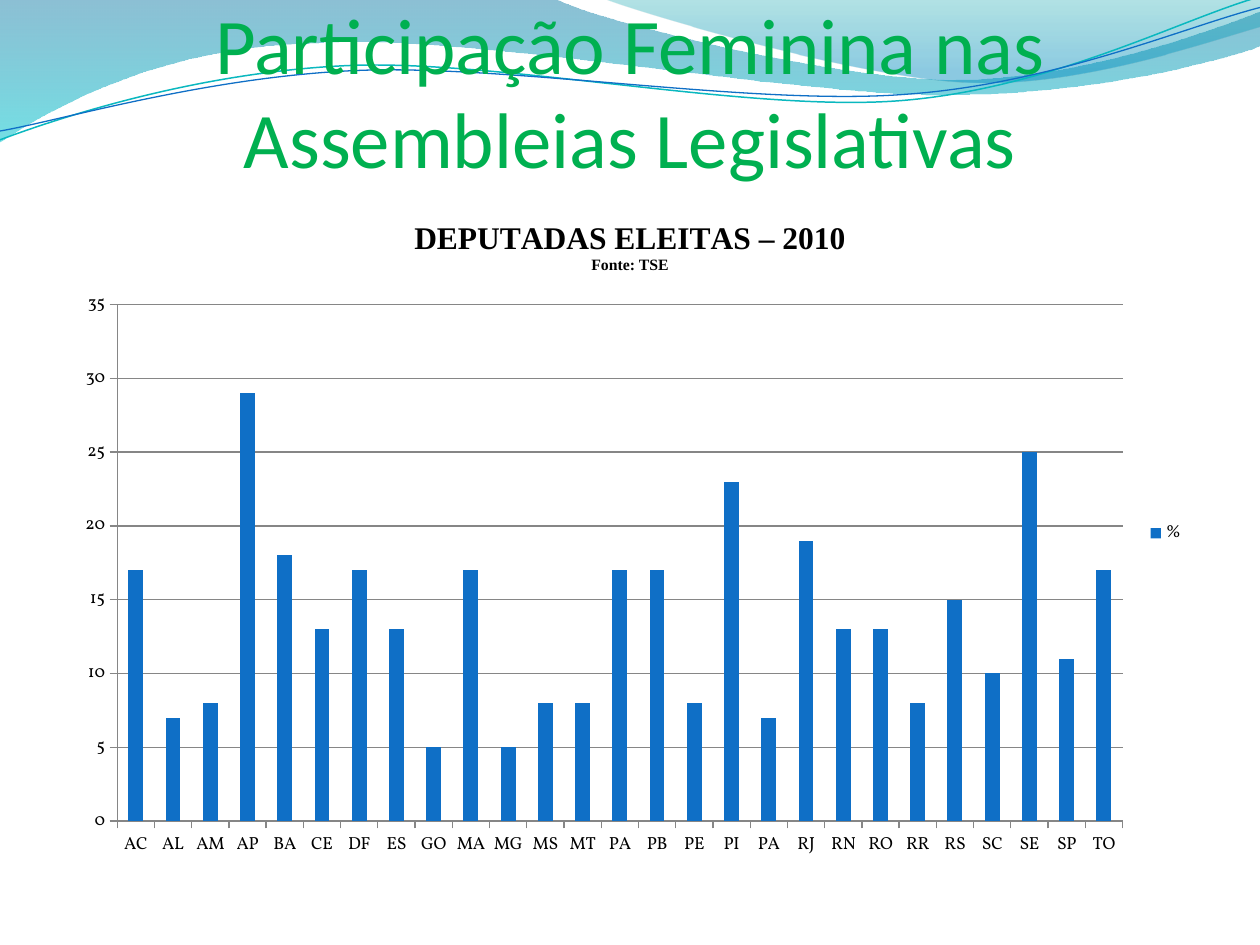
"""Build a slide with a wave header and a column chart of elected deputies."""
import math
from lxml import etree
from pptx import Presentation
from pptx import util as u
from pptx.chart.data import CategoryChartData
from pptx.dml.color import RGBColor
from pptx.enum import chart as ch, text
from pptx.oxml import parse_xml
from pptx.oxml.ns import nsdecls, qn

INCH = 2.54


def rgb(value):
    return RGBColor.from_string(value)


def add_path(shapes, start, steps, closed, turn=0, center=(0, 0)):
    pts = [start] + [step[i:i + 2] for step in steps for i in range(0, len(step), 2)]
    cx, cy = center
    cos, sin = math.cos(math.radians(turn)), math.sin(math.radians(turn))
    pts = [(u.Cm(INCH * (cx + (x - cx) * cos + (y - cy) * sin)),
            u.Cm(INCH * (cy - (x - cx) * sin + (y - cy) * cos))) for x, y in pts]
    fb = shapes.build_freeform(*pts[0])
    fb.add_line_segments(pts[1:], close=closed)
    sp = fb.convert_to_shape()
    sp.shadow.inherit = False
    sp.rotation = turn % 360
    lines = iter(list(sp._element.spPr.iter(qn("a:lnTo"))))
    for step in steps:
        first = next(lines)
        if len(step) == 6:
            first.tag = qn("a:cubicBezTo")
            for _ in range(2):
                other = next(lines)
                first.append(other[0])
                other.getparent().remove(other)
    return sp


prs = Presentation()
prs.slide_width, prs.slide_height = u.Cm(25.4), u.Cm(19.05)
s = prs.slides.add_slide(prs.slide_layouts[6])

bands = [
    ((0, 0),
     [(4.4, -0.01), (4.76, 0.17, 6.64, 0.63, 7.58, 0.63), (8.53, 0.63, 9.58, 0.26, 10, 0.09),
      (10.01, 0.36), (9.83, 0.44, 8.7, 0.76, 7.46, 0.75), (6.22, 0.75, 3.82, 0.28, 2.57, 0.34),
      (1.29, 0.36, 0.46, 0.83, -0.01, 1.13), (0, 0)],
     [(0, "0074A1", 45), (1, "00C6CF", 55)]),
    ((4.79, -0.01),
     [(5.09, 0.11, 6.82, 0.62, 7.69, 0.65), (8.56, 0.69, 9.61, 0.32, 10, 0.21), (10, 0),
      (4.79, -0.01)],
     [(0, "00A1A9", 30), (0.8, "008BBF", 45)]),
]
for start, steps, stops in bands:
    sp = add_path(s.shapes, start, steps, True)
    sp.line.fill.background()
    sp.fill.gradient()
    sp.fill.gradient_angle = 270
    for stop, (position, color, _) in zip(sp.fill.gradient_stops, stops):
        stop.position = position
        stop.color.rgb = rgb(color)
    for clr, (_, _, opacity) in zip(sp._element.spPr.iter(qn("a:srgbClr")), stops):
        etree.SubElement(clr, qn("a:alpha")).set("val", str(opacity * 1000))

waves = [
    ((0, 1.11),
     [(0.48, 0.93, 1.58, 0.57, 2.77, 0.52), (3.95, 0.47, 5.93, 0.89, 7.13, 0.8),
      (8.33, 0.71, 9.38, 0.15, 9.98, -0.02)], (4.99, 0.57), "0AB8BF", 0.85),
    ((0, 1.04),
     [(0.47, 0.96, 1.64, 0.61, 2.83, 0.56), (4.03, 0.51, 5.97, 0.84, 7.17, 0.75),
      (8.36, 0.67, 9.41, 0.21, 10, 0.06)], (5, 0.59), "0F6FC6", 0.75),
]
for start, steps, center, color, width in waves:
    sp = add_path(s.shapes, start, steps, False, -2.7, center)
    sp.fill.background()
    sp.line.color.rgb = rgb(color)
    sp.line.width = u.Pt(width)

title = s.shapes.add_textbox(u.Cm(1.27), u.Cm(1.82), u.Cm(22.86), u.Cm(1.9))
tf = title.text_frame
tf.word_wrap = True
tf.vertical_anchor = text.MSO_ANCHOR.BOTTOM
tf.margin_left = tf.margin_right = tf.margin_top = tf.margin_bottom = 0
tf.text = "Participação Feminina nas Assembleias Legislativas"
p = tf.paragraphs[0]
p.alignment = text.PP_ALIGN.CENTER
r = p.runs[0]
r.font.size, r.font.name = u.Pt(45), "Calibri"
r.font.color.rgb = rgb("00B050")

data = CategoryChartData(number_format="General")
data.categories = ("AC AL AM AP BA CE DF ES GO MA MG MS MT PA PB PE PI PA "
                   "RJ RN RO RR RS SC SE SP TO").split()
data.add_series("%", [17, 7, 8, 29, 18, 13, 17, 13, 5, 17, 5, 8, 8, 17,
                      17, 8, 23, 7, 19, 13, 13, 8, 15, 10, 25, 11, 17])
chart = s.shapes.add_chart(ch.XL_CHART_TYPE.COLUMN_CLUSTERED, u.Cm(1.27), u.Cm(3.93),
                           u.Cm(22.86), u.Cm(13.64), data).chart
chart.font.size, chart.font.name = u.Pt(10), "Vollkorn"
chart.font.color.rgb = rgb("000000")

chart.has_title = True
tf = chart.chart_title.text_frame
tf.text = "DEPUTADAS ELEITAS – 2010\nFonte: TSE"
for p, size in zip(tf.paragraphs, (18, 9)):
    font = p.runs[0].font
    font.size, font.bold, font.name = u.Pt(size), True, "Times New Roman"
    font.color.rgb = rgb("000000")

chart.has_legend = True
chart.legend.position = ch.XL_LEGEND_POSITION.RIGHT
chart.legend.include_in_layout = False

plot = chart.plots[0]
plot.gap_width = 150
plot.vary_by_categories = False
plot.series[0].format.fill.solid()
plot.series[0].format.fill.fore_color.rgb = rgb("0F6FC6")

axis = chart.value_axis
axis.minimum_scale, axis.maximum_scale, axis.major_unit = 0, 35, 5
axis.has_major_gridlines = True
for ax in (chart.category_axis, axis):
    ax.major_tick_mark = ch.XL_TICK_MARK.OUTSIDE
for line in (chart.category_axis.format.line, axis.format.line, axis.major_gridlines.format.line):
    line.color.rgb = rgb("868686")
    line.width = u.Pt(0.75)

area = chart._chartSpace.chart.plotArea
for old in area.findall(qn("c:layout")):
    area.remove(old)
area.insert(0, parse_xml(
    f'<c:layout {nsdecls("c")}><c:manualLayout><c:layoutTarget val="inner"/>'
    '<c:xMode val="edge"/><c:yMode val="edge"/>'
    f'<c:x val="{0.43 / 9}"/><c:y val="{0.87 / 5.37}"/>'
    f'<c:w val="{7.98 / 9}"/><c:h val="{4.1 / 5.37}"/></c:manualLayout></c:layout>'))

prs.save("out.pptx")
